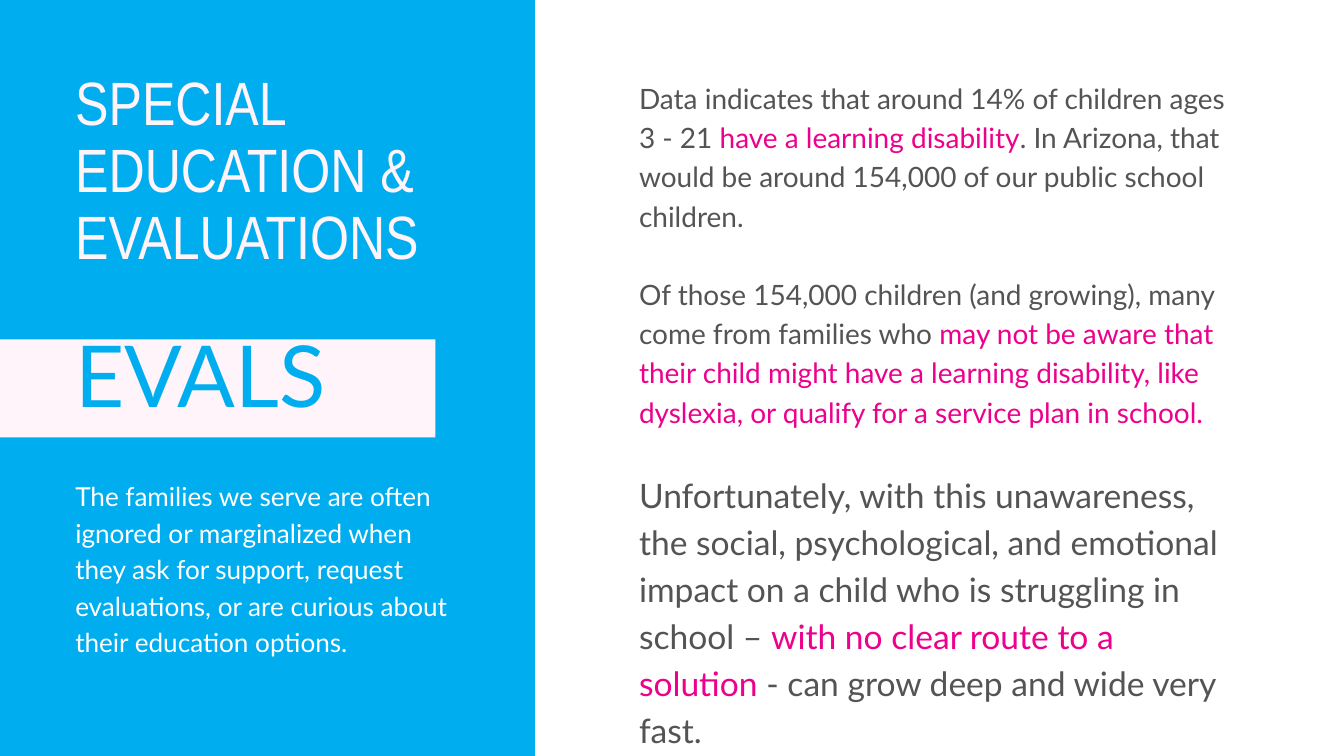
from pptx import Presentation
from pptx.dml.color import RGBColor
from pptx.enum.shapes import MSO_SHAPE
from pptx.util import Inches, Pt

RECT = MSO_SHAPE.RECTANGLE
BLUE = RGBColor(0x00, 0xAE, 0xEF)
BLUSH = RGBColor(0xFF, 0xF4, 0xFA)
PINK = RGBColor(0xEC, 0x00, 0x8C)
GRAY = RGBColor(0x54, 0x54, 0x54)
WHITE = RGBColor(0xFF, 0xFF, 0xFF)

LEFT = 5.6  # left margin of the panel text, in percent

# Each paragraph: text size, line pitch, runs as (text, is accent)
FACTS = [
    (30, 42, [
        ("Data indicates that around 14% of children ages 3 - 21 ", False),
        ("have a learning disability", True),
        (". In Arizona, that would be around 154,000 of our public school "
         "children.", False)]),
    (30, 42, [
        ("Of those 154,000 children (and growing), many come from families "
         "who ", False),
        ("may not be aware that their child might have a learning "
         "disability, like dyslexia, or qualify for a service plan in "
         "school.", True)]),
    (36, 50.4, [
        ("Unfortunately, with this unawareness, the social, psychological, "
         "and emotional impact on a child who is struggling in school – ",
         False),
        ("with no clear route to a solution", True),
        (" - can grow deep and wide very fast.", False)]),
]


class Deck:
    """Holds the style and the current slide; boxes are in percent of it."""

    def __init__(self, wide, high):
        self.prs = Presentation()
        self.prs.slide_width = Inches(wide)
        self.prs.slide_height = Inches(high)
        self.slide = self.prs.slides.add_slide(self.prs.slide_layouts[6])
        self.face = "Lato"
        self.accent = PINK

    def place(self, box):
        wide, high = self.prs.slide_width, self.prs.slide_height
        return [round(part * side / 100)
                for part, side in zip(box, (wide, high, wide, high))]

    def block(self, box, fill):
        shape = self.slide.shapes.add_shape(RECT, *self.place(box))
        shape.shadow.inherit = False
        shape.fill.solid()
        shape.fill.fore_color.rgb = fill
        shape.line.fill.background()

    def text(self, box, paras, color, face=None, gap=0):
        """Write paragraphs of (size, pitch, runs), with gap points between."""
        frame = self.slide.shapes.add_textbox(*self.place(box)).text_frame
        frame.word_wrap = True
        frame.margin_left = frame.margin_right = 0
        frame.margin_top = frame.margin_bottom = 0
        for i, (size, pitch, runs) in enumerate(paras):
            para = frame.add_paragraph() if i else frame.paragraphs[0]
            para.line_spacing = Pt(pitch)
            if i:
                para.space_before = Pt(gap)
            para.font.name = face or self.face
            para.font.size = Pt(size)
            para.font.color.rgb = color
            for words, strong in runs:
                run = para.add_run()
                run.text = words
                if strong:
                    run.font.color.rgb = self.accent

    def line(self, box, words, size, pitch, color, face=None):
        """Write one plain paragraph."""
        self.text(box, [(size, pitch, [(words, False)])], color, face)


def main():
    deck = Deck(20, 11.25)
    deck.block((0, 0, 39.8, 100), BLUE)
    deck.line((LEFT, 9.33, 28, 28.09), "SPECIAL EDUCATION & EVALUATIONS",
              65.5, 72, BLUSH, "Arial Narrow")
    deck.text((47.55, 10.04, 44.4, 82.93), FACTS, GRAY, gap=42)
    deck.block((0, 44.89, 32.4, 12.98), BLUSH)
    deck.line((LEFT, 43.73, 31.6, 15.29), "EVALS", 91.5, 100.6, BLUE)
    deck.line((LEFT, 62.84, 28.55, 20),
              "The families we serve are often ignored or marginalized when "
              "they ask for support, request evaluations, or are curious "
              "about their education options.", 28, 39.2, WHITE)
    deck.prs.save("out.pptx")


if __name__ == "__main__":
    main()
